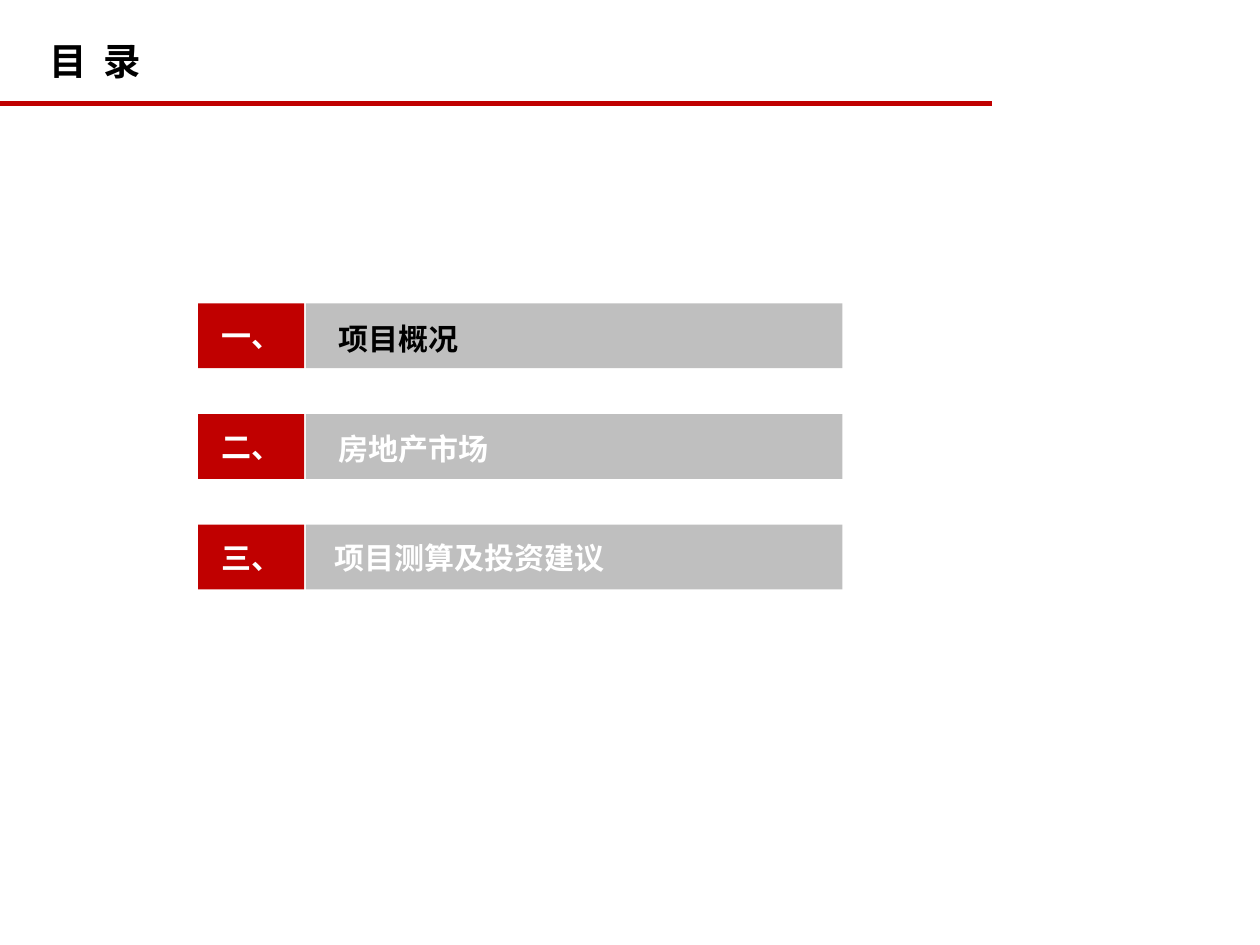
from lxml.etree import SubElement
from pptx import Presentation
from pptx.dml.color import RGBColor
from pptx.enum.shapes import MSO_CONNECTOR, MSO_SHAPE
from pptx.enum.text import MSO_ANCHOR, MSO_AUTO_SIZE, PP_ALIGN
from pptx.oxml.ns import qn
from pptx.util import Inches, Pt

FONT = "Noto Sans CJK SC"
RED, GREY, BLACK, WHITE = "C00000", "BFBFBF", "000000", "FFFFFF"


def color(value):
    return RGBColor.from_string(value)


class AgendaSlide:
    """Holds the style and the current slide."""

    def __init__(self, presentation):
        self.slide = presentation.slides.add_slide(presentation.slide_layouts[5])

    def add_text(self, shape, text, size, text_color, align, frame_format):
        frame = shape.text_frame
        for name, value in frame_format.items():
            setattr(frame, name, value)
        paragraph = frame.paragraphs[0]
        paragraph.alignment = align
        run = paragraph.add_run()
        run.text = text
        font_format = {"name": FONT, "size": Pt(size), "bold": True}
        for name, value in font_format.items():
            setattr(run.font, name, value)
        run.font.color.rgb = color(text_color)
        properties = run._r.get_or_add_rPr()
        SubElement(properties, qn("a:ea")).set("typeface", FONT)
        return properties

    def title(self, text, left, top, width, height):
        shape = self.slide.shapes.title
        place = {"left": left, "top": top, "width": width, "height": height}
        for name, value in place.items():
            setattr(shape, name, Inches(value))
        properties = self.add_text(shape, text, 30, BLACK, PP_ALIGN.LEFT, {
            "auto_size": MSO_AUTO_SIZE.NONE,
            "vertical_anchor": MSO_ANCHOR.BOTTOM,
            "margin_left": 0, "margin_right": Inches(0.14),
            "margin_top": Inches(0.07), "margin_bottom": Inches(0.07)})
        # Widen the letter spacing, in hundredths of a point
        properties.set("spc", "336")

    def rule(self, left, top, width):
        line = self.slide.shapes.add_connector(
            MSO_CONNECTOR.STRAIGHT, Inches(left), Inches(top),
            Inches(left + width), Inches(top))
        line.line.color.rgb = color(RED)
        line.line.width = Pt(4.5)
        SubElement(line._element.spPr, qn("a:effectLst"))

    def bar(self, text, left, top, width, height, fill, text_color=WHITE,
            align=PP_ALIGN.CENTER, inset=0.1, top_inset=0.05):
        shape = self.slide.shapes.add_shape(
            MSO_SHAPE.RECTANGLE, Inches(left), Inches(top),
            Inches(width), Inches(height))
        shape.shadow.inherit = False
        shape.fill.solid()
        shape.fill.fore_color.rgb = color(fill)
        shape.line.fill.background()
        self.add_text(shape, text, 24, text_color, align, {
            "word_wrap": True, "vertical_anchor": MSO_ANCHOR.MIDDLE,
            "margin_left": Inches(inset), "margin_top": Inches(top_inset)})


def main():
    presentation = Presentation()
    presentation.slide_width = Inches(14)
    presentation.slide_height = Inches(10.5)
    agenda = AgendaSlide(presentation)

    # Header
    agenda.rule(0, 1.15, 11.02)
    agenda.title("目 录", 0.55, 0.42, 1.95, 0.57)

    # Agenda rows: number, topic, topic colour, left and top insets
    rows = [
        ("一、", "项目概况", BLACK, 0.36, 0.1),
        ("二、", "房地产市场", WHITE, 0.36, 0.1),
        ("三、", "项目测算及投资建议", WHITE, 0.32, 0.05),
    ]
    first_top, pitch, height = 3.37, 1.23, 0.72
    for index, (number, topic, topic_color, inset, top_inset) in enumerate(rows):
        top = first_top + index * pitch
        agenda.bar(number, 2.2, top, 1.18, height, RED)
        agenda.bar(topic, 3.4, top, 5.96, height, GREY, topic_color,
                   PP_ALIGN.LEFT, inset, top_inset)

    presentation.save("out.pptx")


if __name__ == "__main__":
    main()
